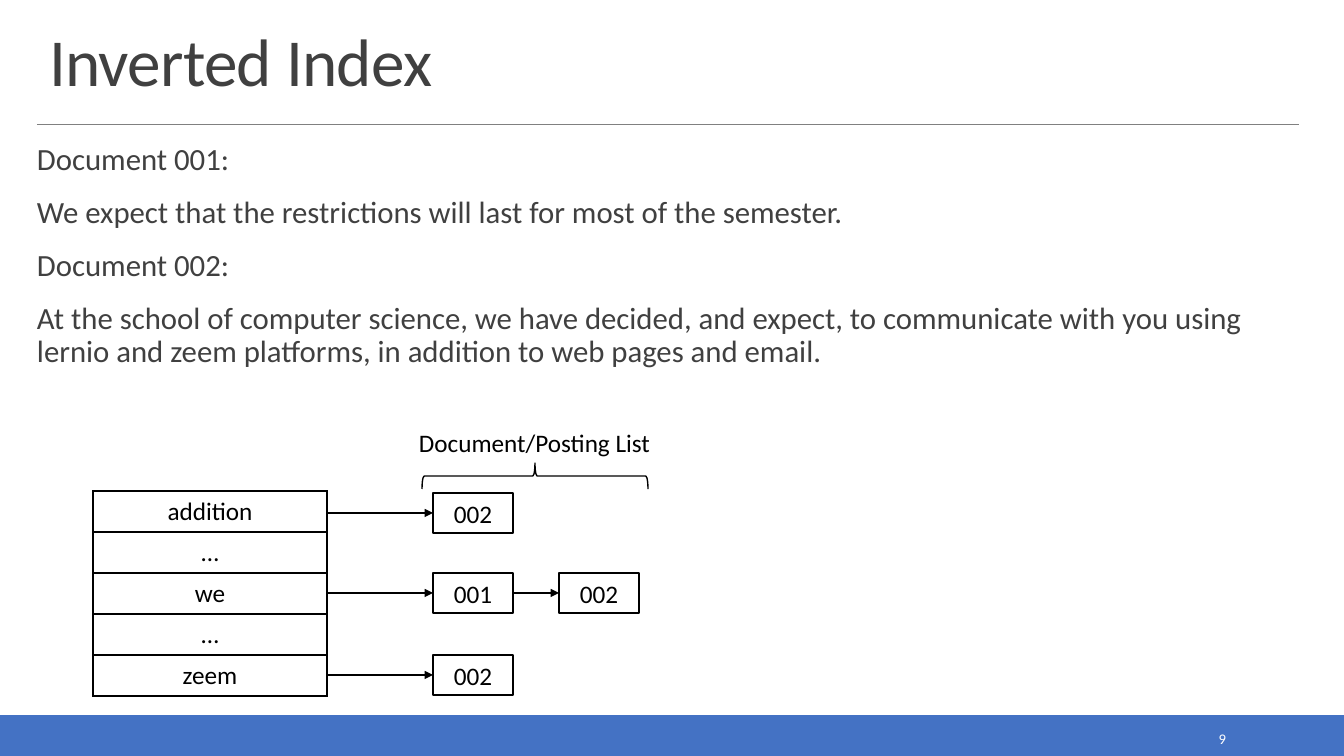
from dataclasses import dataclass

import lxml.etree
import pptx
import pptx.dml.color
import pptx.enum.shapes
import pptx.enum.text
import pptx.oxml.ns
import pptx.util

Align = pptx.enum.text.PP_ALIGN
Anchor = pptx.enum.text.MSO_ANCHOR
Preset = pptx.enum.shapes.MSO_SHAPE
RGBColor = pptx.dml.color.RGBColor
qn = pptx.oxml.ns.qn


@dataclass(frozen=True)
class Theme:
    font: str = "Calibri"
    accent: str = "4472C4"
    paper: str = "FFFFFF"
    ink: str = "000000"
    text: str = "404040"
    rule: str = "808080"
    title_size: float = 48
    body_size: float = 22
    label_size: float = 18
    number_size: float = 10.5


class SlideBuilder:
    EMU_PER_PX = 914400 / 100.8

    def __init__(self, slide, theme):
        self.slide = slide
        self.theme = theme

    @classmethod
    def px(cls, value):
        return pptx.util.Emu(round(value * cls.EMU_PER_PX))

    def lengths(self, *values):
        return [self.px(value) for value in values]

    def format(self, text_frame, size, color, align):
        for paragraph in text_frame.paragraphs:
            paragraph.alignment = align
            for run in paragraph.runs:
                run.font.name = self.theme.font
                run.font.size = pptx.util.Pt(size)
                run.font.color.rgb = RGBColor.from_string(color)

    def stroke(self, line, color, width):
        line.color.rgb = RGBColor.from_string(color)
        line.width = pptx.util.Pt(width)

    def place(self, shape, left, top, width, height):
        shape.left, shape.top, shape.width, shape.height = self.lengths(left, top, width, height)

    def title(self, text, *box):
        shape = self.slide.shapes.title
        self.place(shape, *box)
        frame = shape.text_frame
        frame.text = text
        frame.auto_size = pptx.enum.text.MSO_AUTO_SIZE.NONE
        frame.vertical_anchor = Anchor.BOTTOM
        self.format(frame, self.theme.title_size, self.theme.text, Align.LEFT)
        paragraph = frame.paragraphs[0]
        paragraph.line_spacing = 0.85
        paragraph.runs[0]._r.get_or_add_rPr().set("spc", "-50")

    def body(self, lines, *box):
        shape = self.slide.placeholders[1]
        self.place(shape, *box)
        frame = shape.text_frame
        frame.text = "\n".join(lines)
        frame.auto_size = pptx.enum.text.MSO_AUTO_SIZE.NONE
        frame.margin_left = frame.margin_right = 0
        frame.margin_top = frame.margin_bottom = self.px(4)
        self.format(frame, self.theme.body_size, self.theme.text, Align.LEFT)
        for paragraph in frame.paragraphs:
            paragraph.line_spacing = 0.9
            paragraph.space_before = pptx.util.Pt(12)
            paragraph.space_after = pptx.util.Pt(2)
            properties = paragraph._p.get_or_add_pPr()
            properties.set("marL", "0")
            properties.set("indent", "0")
            lxml.etree.SubElement(properties, qn("a:buNone"))

    def label(self, text, size, color, align, *box):
        shape = self.slide.shapes.add_textbox(*self.lengths(*box))
        frame = shape.text_frame
        frame.word_wrap = True
        frame.vertical_anchor = Anchor.MIDDLE
        frame.text = text
        self.format(frame, size, color, align)

    def box(self, text, fill, line, *box):
        shape = self.slide.shapes.add_shape(Preset.RECTANGLE, *self.lengths(*box))
        shape.shadow.inherit = False
        shape.fill.solid()
        shape.fill.fore_color.rgb = RGBColor.from_string(fill)
        self.stroke(shape.line, line, 1.25)
        if text:
            shape.text_frame.text = text
            shape.text_frame.vertical_anchor = Anchor.MIDDLE
            self.format(shape.text_frame, self.theme.label_size, self.theme.ink, Align.CENTER)
        return shape

    def brace(self, *box):
        shape = self.slide.shapes.add_shape(Preset.RIGHT_BRACE, *self.lengths(*box))
        shape.shadow.inherit = False
        shape.rotation = 270
        shape.fill.background()
        self.stroke(shape.line, self.theme.ink, 1)

    def line(self, color, width, *ends):
        connector = self.slide.shapes.add_connector(
            pptx.enum.shapes.MSO_CONNECTOR.STRAIGHT, *self.lengths(*ends))
        self.stroke(connector.line, color, width)
        lxml.etree.SubElement(connector._element.spPr, qn("a:effectLst"))
        return connector

    def arrow(self, *ends, source=None, target):
        connector = self.line(self.theme.ink, 1, *ends)
        line = connector.line._get_or_add_ln()
        lxml.etree.SubElement(line, qn("a:tailEnd"), type="triangle")
        if source is not None:
            connector.begin_connect(source, 3)
        connector.end_connect(target, 1)

    def border(self, cell):
        properties = cell._tc.get_or_add_tcPr()
        for position, side in enumerate(("a:lnL", "a:lnR", "a:lnT", "a:lnB")):
            line = lxml.etree.Element(qn(side), w=str(pptx.util.Pt(1)))
            fill = lxml.etree.SubElement(line, qn("a:solidFill"))
            lxml.etree.SubElement(fill, qn("a:srgbClr"), val=self.theme.ink)
            properties.insert(position, line)

    def table(self, words, left, top, width, row_height):
        table = self.slide.shapes.add_table(
            len(words), 1, *self.lengths(left, top, width, row_height * len(words))).table
        table.first_row = table.horz_banding = False
        for row, word in zip(table.rows, words):
            row.height = self.px(row_height)
            cell = row.cells[0]
            cell.text = word
            cell.fill.background()
            self.format(cell.text_frame, self.theme.label_size, self.theme.ink, Align.CENTER)
            self.border(cell)


def main():
    theme = Theme()
    presentation = pptx.Presentation()
    presentation.slide_width = SlideBuilder.px(1344)
    presentation.slide_height = SlideBuilder.px(756)
    slide = presentation.slides.add_slide(presentation.slide_layouts[1])
    builder = SlideBuilder(slide, theme)

    builder.box("", theme.accent, theme.accent, 0, 716, 1344, 40)
    builder.line(theme.rule, 0.5, 37, 124, 1299, 124)
    builder.title("Inverted Index", 39, 20, 1262, 85)
    builder.body([
        "Document 001:",
        "We expect that the restrictions will last for most of the semester.",
        "Document 002:",
        "At the school of computer science, we have decided, and expect, to communicate "
        "with you using lernio and zeem platforms, in addition to web pages and email.",
    ], 37, 140, 1262, 254)
    builder.label("9", theme.number_size, theme.paper, Align.RIGHT, 1092, 725, 144, 28)

    table_left, table_width = 93, 234
    builder.table(["addition", "…", "we", "…", "zeem"], table_left, 491, table_width, 41)

    table_right = table_left + table_width
    posting_left, posting_step, posting_width, posting_height = 433, 126, 80, 40
    posting_lists = [(493, ["002"]), (573, ["001", "002"]), (655, ["002"])]
    for top, documents in posting_lists:
        middle = top + posting_height // 2
        start, previous = table_right, None
        for index, document in enumerate(documents):
            left = posting_left + index * posting_step
            posting = builder.box(document, theme.paper, theme.ink,
                                  left, top, posting_width, posting_height)
            builder.arrow(start, middle, left, middle, source=previous, target=posting)
            start, previous = left + posting_width, posting

    builder.brace(522, 363, 26, 226)
    builder.label("Document/Posting List", theme.label_size, theme.ink, Align.CENTER,
                  378, 422, 313, 40)
    presentation.save("out.pptx")


if __name__ == "__main__":
    main()
